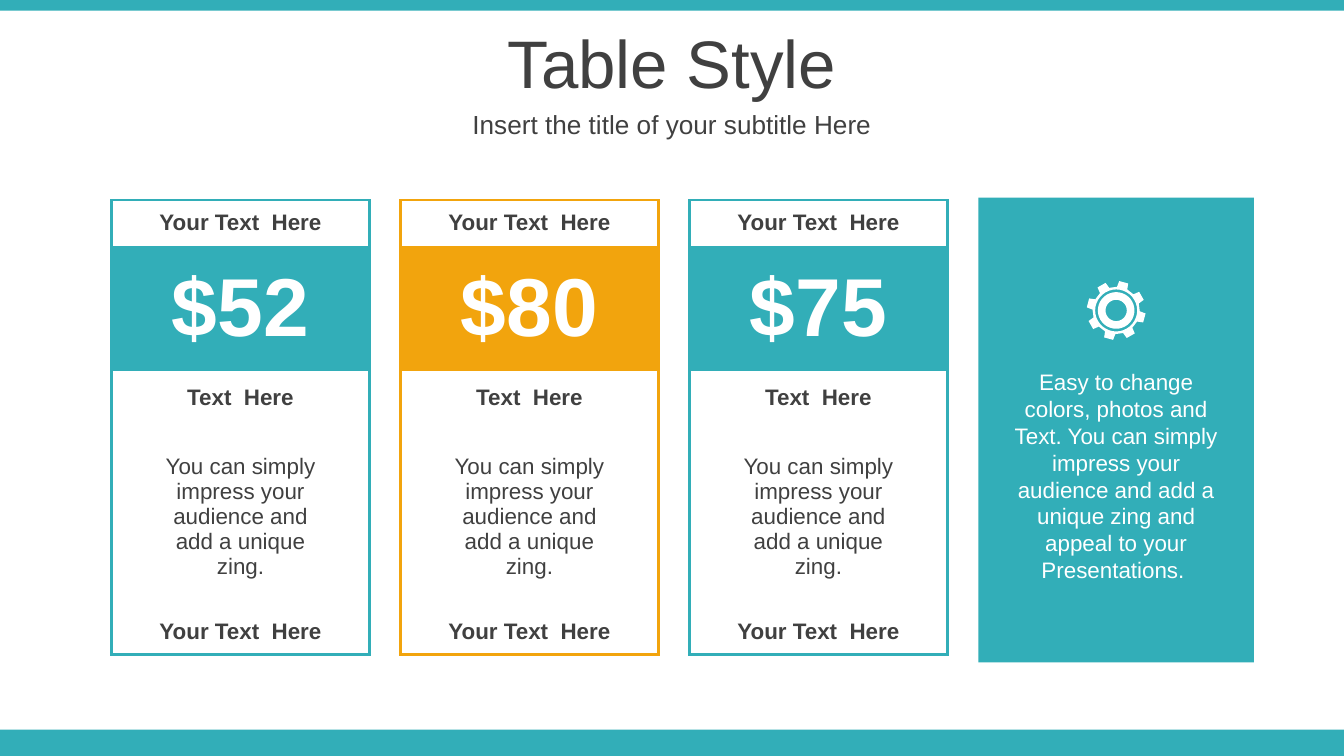
import math
import pptx
import pptx.util
import pptx.dml.color
import pptx.enum.shapes
import pptx.enum.text
import pptx.oxml
import pptx.oxml.ns

Inches = pptx.util.Inches
Pt = pptx.util.Pt
ALIGN = pptx.enum.text.PP_ALIGN
ANCHOR = pptx.enum.text.MSO_ANCHOR
COLORS = {"teal": "32AEB8", "gold": "F2A40D", "ink": "404040", "white": "FFFFFF"}
COLS = [0.25, 1.42, 0.25]
ROWS = [0.34, 0.93, 0.34, 0.34, 0.34, 0.63, 0.34]
WIDE = (0, 1, 6)
BODY = "You can simply impress your audience and add a unique zing."
NOTE = ("Easy to change colors, photos and Text. You can simply impress your "
        "audience and add a unique zing and appeal to your Presentations. ")


def color(name):
    """Return the named colour."""
    return pptx.dml.color.RGBColor.from_string(COLORS[name])


def write(frame, text, tone, **style):
    """Put one centred paragraph in a text frame."""
    frame.text = text
    frame.word_wrap = True
    para = frame.paragraphs[0]
    para.alignment = ALIGN.CENTER
    para.space_before = Pt(0)
    font = para.runs[0].font
    font.color.rgb = color(tone)
    for key, value in {"name": "Arial", **style}.items():
        setattr(font, key, value)


def paint(shape, tone):
    """Fill a shape plainly, with no line or shadow."""
    shape.shadow.inherit = False
    shape.fill.solid()
    shape.fill.fore_color.rgb = color(tone)
    shape.line.fill.background()


def block(slide, box, tone):
    """Add a plain rectangle."""
    kind = pptx.enum.shapes.MSO_SHAPE.RECTANGLE
    paint(slide.shapes.add_shape(kind, *map(Inches, box)), tone)


def edge(cell, side, tone):
    """Draw one cell border, or clear it when there is no tone."""
    space = pptx.oxml.ns.nsdecls("a")
    fill = "<a:noFill/>"
    if tone:
        fill = f'<a:solidFill><a:srgbClr val="{COLORS[tone]}"/></a:solidFill>'
    xml = f'<a:ln{side} {space} w="{Pt(1.5)}">{fill}</a:ln{side}>'
    cell._tc.get_or_add_tcPr().append(pptx.oxml.parse_xml(xml))


def heading(slide, box):
    """Place the title and the subtitle below it."""
    left, top, width, height = box
    title = slide.shapes.title
    places = {"left": left, "top": top, "width": width, "height": height}
    for key, value in places.items():
        setattr(title, key, Inches(value))
    write(title.text_frame, "Table Style", "ink", size=Pt(36))
    sub = slide.shapes.add_textbox(
        *map(Inches, (left, top + height, width, 0.31)))
    write(sub.text_frame, "Insert the title of your subtitle Here", "ink", size=Pt(14))
    for shape in (title, sub):
        shape.text_frame.vertical_anchor = ANCHOR.MIDDLE


def card(slide, box, price, tone):
    """Build one price table."""
    frame = slide.shapes.add_table(len(ROWS), len(COLS), *map(Inches, box))
    table = frame.table
    table.first_row = table.horz_banding = False
    for items, key, sizes in ((table.columns, "width", COLS), (table.rows, "height", ROWS)):
        for item, size in zip(items, sizes):
            setattr(item, key, Inches(size))
    for row in range(len(ROWS)):
        for col in range(len(COLS)):
            cell = table.cell(row, col)
            sides = {"L": col == 0, "R": col == len(COLS) - 1 or row in WIDE,
                     "T": row == 0, "B": row == len(ROWS) - 1}
            for side, outer in sides.items():
                edge(cell, side, tone if outer else None)
            cell.fill.solid()
            cell.fill.fore_color.rgb = color(tone if row == 1 else "white")
            if row in (3, 4) and col != 1:
                cell.margin_bottom = Inches(0.02)
    for row in WIDE:
        table.cell(row, 0).merge(table.cell(row, 2))
    table.cell(3, 1).merge(table.cell(5, 1))
    texts = [(0, 0, "Your Text  Here", "ink", 12, True),
             (1, 0, price, "white", 44, True),
             (2, 1, "Text  Here", "ink", 12, True),
             (3, 1, BODY, "ink", 12, False),
             (6, 0, "Your Text  Here", "ink", 12, True)]
    for row, col, text, ink, size, bold in texts:
        cell = table.cell(row, col)
        cell.vertical_anchor = ANCHOR.MIDDLE
        write(cell.text_frame, text, ink, size=Pt(size), bold=bold)


def gear(slide, x, y, size):
    """Draw an eight-toothed gear around a centre point."""
    def spot(angle, part):
        turn = math.radians(angle)
        reach = size * part
        return Inches(x + reach * math.sin(turn)), Inches(y - reach * math.cos(turn))

    tooth = [(-13, 0.8), (-9, 1), (9, 1), (13, 0.8)]
    rim = [spot(15 + 45 * step + turn, part) for step in range(8) for turn, part in tooth]
    rings = [[spot(turn, part) for turn in range(0, 360, 10)] for part in (0.71, 0.62, 0.36)]
    pen = slide.shapes.build_freeform(*rim[0], scale=1.0)
    pen.add_line_segments(rim[1:], close=True)
    for ring in rings:
        pen.move_to(*ring[0])
        pen.add_line_segments(ring[1:], close=True)
    paint(pen.convert_to_shape(), "white")


def panel(slide, box):
    """Build the side panel with its gear and note."""
    left, top, width, height = box
    block(slide, box, "teal")
    gear(slide, left + width / 2, top + 0.84, 0.22)
    note = slide.shapes.add_textbox(
        *map(Inches, (left + 0.12, top + 1.22, width - 0.24, 1.72)))
    write(note.text_frame, NOTE, "white", size=Pt(12))


def main():
    """Build and save the slide."""
    deck = pptx.Presentation()
    deck.slide_width = Inches(10)
    deck.slide_height = deck.slide_width * 9 // 16
    slide = deck.slides.add_slide(deck.slide_layouts[5])
    block(slide, (0, 5.43, 10, 0.2), "teal")
    block(slide, (0, 0, 10, 0.08), "teal")
    heading(slide, (0, 0.14, 10, 0.63))
    plans = [("$52", "teal"), ("$80", "gold"), ("$75", "teal")]
    for step, (price, tone) in enumerate(plans):
        card(slide, (0.83 + 2.15 * step, 1.49, sum(COLS), sum(ROWS)), price, tone)
    panel(slide, (7.28, 1.47, 2.05, 3.46))
    deck.save("out.pptx")


if __name__ == "__main__":
    main()
